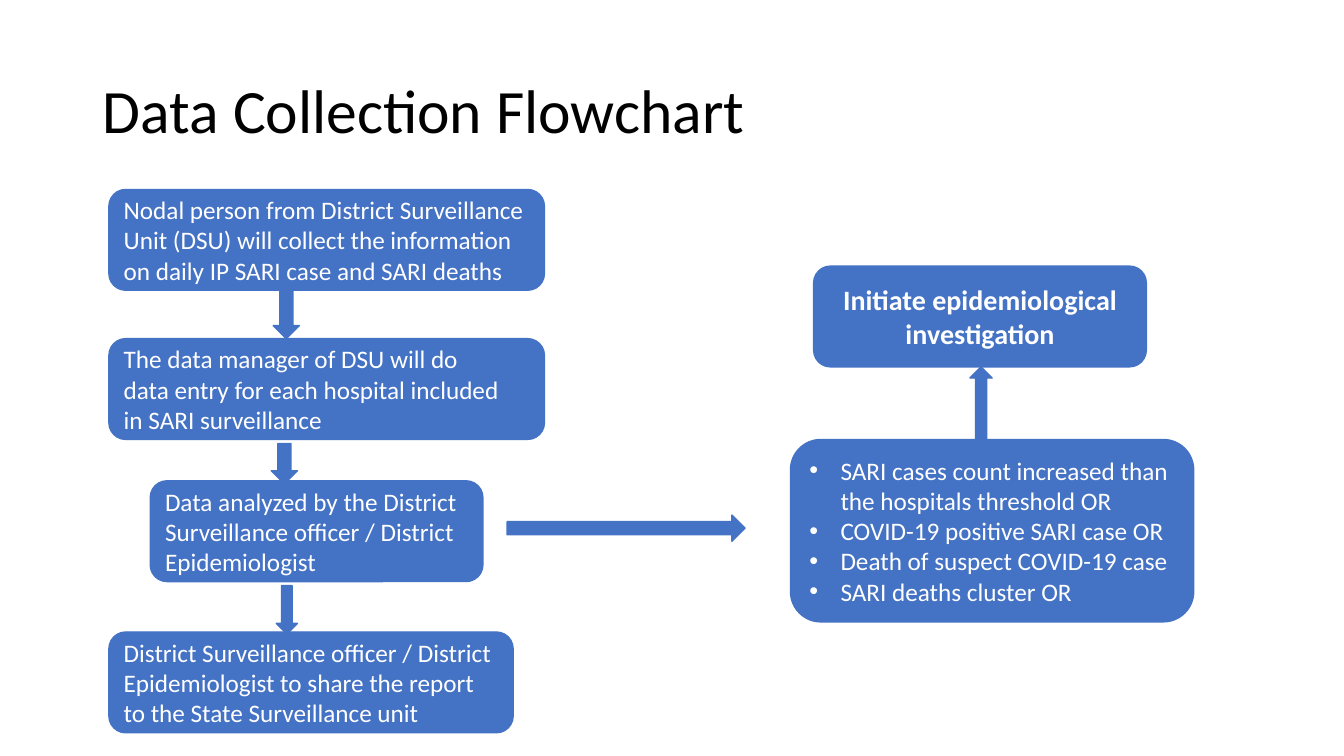
from dataclasses import dataclass

from lxml import etree
from pptx import Presentation
from pptx import util as u
from pptx.dml.color import RGBColor
from pptx.enum import shapes, text
from pptx.oxml import ns

PX = 9144
BLUE = RGBColor(0x44, 0x72, 0xC4)
WHITE = RGBColor(0xFF, 0xFF, 0xFF)
BLACK = RGBColor(0x00, 0x00, 0x00)
FONT = "Calibri"
BULLET_INDENT = 31


@dataclass(frozen=True)
class Step:
    left: int
    top: int
    width: int
    lines: tuple[str, ...]
    height: int = 100
    size: int = 18
    heading: bool = False
    bulleted: bool = False


@dataclass(frozen=True)
class Arrow:
    left: int
    top: int
    width: int
    height: int
    rotation: int = 0


STEPS = (
    Step(108, 188, 432, (
        "Nodal person from District Surveillance Unit (DSU) will collect "
        "the information on daily IP SARI case and SARI deaths",
    )),
    Step(108, 336, 432, (
        "The data manager of DSU will do",
        "data entry for each hospital included",
        "in SARI surveillance",
    )),
    Step(149, 477, 330, (
        "Data analyzed by the District",
        "Surveillance officer / District",
        "Epidemiologist",
    )),
    Step(108, 627, 401, (
        "District Surveillance officer / District",
        "Epidemiologist to share the report",
        "to the State Surveillance unit",
    )),
    Step(784, 436, 400, (
        "SARI cases count increased than the hospitals threshold OR",
        "COVID-19 positive SARI case OR",
        "Death of suspect COVID-19 case",
        "SARI deaths cluster OR",
    ), height=181, bulleted=True),
    Step(807, 264, 330, (
        "Initiate epidemiological",
        "investigation",
    ), size=20, heading=True),
)

ARROWS = (
    Arrow(271, 288, 26, 48),
    Arrow(274, 581, 21, 48),
    Arrow(962, 364, 22, 74, rotation=180),
    Arrow(269, 440, 26, 40),
    Arrow(608, 406, 26, 236, rotation=270),
)


def px(length: int) -> u.Emu:
    return u.Emu(length * PX)


def add_span(para, wording: str, size: int, color: RGBColor, bold: bool = False) -> None:
    span = para.add_run()
    span.text = wording
    span.font.name = FONT
    span.font.size = u.Pt(size)
    span.font.bold = bold
    span.font.color.rgb = color


def add_bullet(para) -> None:
    properties = para._p.get_or_add_pPr()
    properties.set("marL", str(px(BULLET_INDENT)))
    properties.set("indent", str(-px(BULLET_INDENT)))
    etree.SubElement(properties, ns.qn("a:buFont")).set("typeface", "Arial")
    etree.SubElement(properties, ns.qn("a:buChar")).set("char", "•")


def add_blue_shape(page, kind: shapes.MSO_SHAPE, item: Step | Arrow):
    shape = page.shapes.add_shape(
        kind, px(item.left), px(item.top), px(item.width), px(item.height)
    )
    shape.shadow.inherit = False
    shape.fill.solid()
    shape.fill.fore_color.rgb = BLUE
    shape.line.color.rgb = BLUE
    shape.line.width = u.Pt(1)
    return shape


def draw_step(page, step: Step) -> None:
    box = add_blue_shape(page, shapes.MSO_SHAPE.ROUNDED_RECTANGLE, step)
    frame = box.text_frame
    frame.word_wrap = True
    frame.vertical_anchor = text.MSO_ANCHOR.MIDDLE
    for index, line in enumerate(step.lines):
        para = frame.add_paragraph() if index else frame.paragraphs[0]
        para.alignment = text.PP_ALIGN.CENTER if step.heading else text.PP_ALIGN.LEFT
        if step.bulleted:
            add_bullet(para)
        add_span(para, line, step.size, WHITE, step.heading)


def draw_arrow(page, arrow: Arrow) -> None:
    shape = add_blue_shape(page, shapes.MSO_SHAPE.DOWN_ARROW, arrow)
    shape.rotation = arrow.rotation


def draw_title(page, wording: str) -> None:
    title = page.shapes.title
    title.left, title.top = px(92), px(40)
    title.width, title.height = px(1150), px(145)
    frame = title.text_frame
    frame.word_wrap = True
    frame.auto_size = text.MSO_AUTO_SIZE.NONE
    frame.vertical_anchor = text.MSO_ANCHOR.MIDDLE
    para = frame.paragraphs[0]
    para.alignment = text.PP_ALIGN.LEFT
    para.line_spacing = 0.9
    add_span(para, wording, 44, BLACK)


def main() -> None:
    deck = Presentation()
    deck.slide_width, deck.slide_height = px(1333), px(750)
    page = deck.slides.add_slide(deck.slide_layouts.get_by_name("Title Only"))
    draw_title(page, "Data Collection Flowchart")
    for step in STEPS:
        draw_step(page, step)
    for arrow in ARROWS:
        draw_arrow(page, arrow)
    deck.save("out.pptx")


if __name__ == "__main__":
    main()
